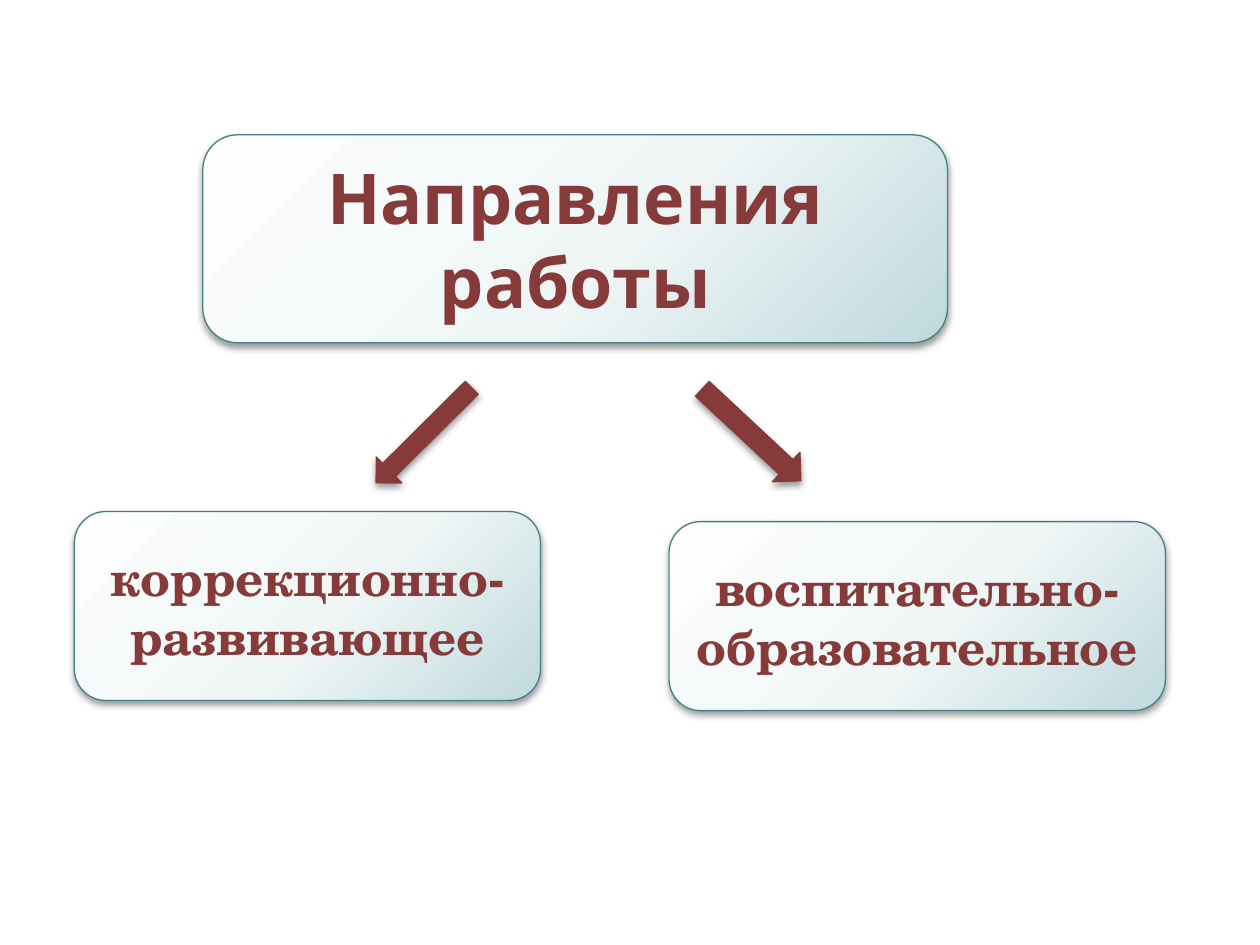
from pptx import Presentation
from pptx.dml.color import RGBColor
from pptx.enum.shapes import MSO_SHAPE as Shape
from pptx.enum.text import MSO_ANCHOR as Anchor, PP_ALIGN as Align
from pptx.oxml import parse_xml
from pptx.oxml.ns import nsdecls, qn
from pptx.util import Inches, Pt

SLIDE_W, SLIDE_H = Inches(10), Inches(7.5)

MAROON = RGBColor(0x86, 0x3A, 0x3A)
TEAL = RGBColor(0x43, 0x80, 0x86)
BLACK = RGBColor(0, 0, 0)
# Gradient stops: percent along the gradient, colour
CARD_STOPS = (
    (0, RGBColor(0xFE, 0xFE, 0xFE)),
    (55, RGBColor(0xF0, 0xF6, 0xF6)),
    (100, RGBColor(0xBF, 0xD9, 0xDD)),
)

HEADING = {"name": "Karla", "size": Pt(40), "bold": True}
BRANCH = {"name": "TeX Gyre Schola", "size": Pt(28), "bold": True}

# Places are left, top, width, height in percent of the slide
CARDS = (
    ("коррекционно-развивающее", (5.9, 54.13, 37, 20), BRANCH),
    ("воспитательно-образовательное", (53.1, 55.2, 39.4, 20), BRANCH),
    ("Направления работы", (16.1, 14.27, 59.1, 22), HEADING),
)
# Place and rotation of each arrow
ARROWS = (
    ((28.3, 44.13, 10.7, 3.87), 315.2),
    ((54.3, 43.87, 10.7, 4.27), 223),
)


def add_soft_shadow(shape):
    shape.shadow.inherit = False
    effects = shape._element.spPr.find(qn("a:effectLst"))
    effects.append(parse_xml(
        f'<a:outerShdw {nsdecls("a")} blurRad="{Pt(4.1)}" dist="{Pt(2)}" '
        f'dir="5400000" rotWithShape="0"><a:srgbClr val="{BLACK}">'
        '<a:alpha val="40000"/></a:srgbClr></a:outerShdw>'))


def add_raised_shape(slide, kind, place, fill_color, line_color):
    left, top, width, height = place
    shape = slide.shapes.add_shape(
        kind,
        round(SLIDE_W * left / 100), round(SLIDE_H * top / 100),
        round(SLIDE_W * width / 100), round(SLIDE_H * height / 100))
    shape.fill.solid()
    shape.fill.fore_color.rgb = fill_color
    shape.line.color.rgb = line_color
    shape.line.width = Pt(0.75)
    add_soft_shadow(shape)
    return shape


def apply_radial_gradient(shape):
    stops = "".join(
        f'<a:gs pos="{percent * 1000}"><a:srgbClr val="{color}"/></a:gs>'
        for percent, color in CARD_STOPS)
    gradient = parse_xml(
        f'<a:gradFill {nsdecls("a")} rotWithShape="1"><a:gsLst>{stops}</a:gsLst>'
        '<a:path path="circle"><a:fillToRect l="-40000" t="-90000" '
        'r="140000" b="190000"/></a:path></a:gradFill>')
    properties = shape._element.spPr
    properties.replace(properties.find(qn("a:solidFill")), gradient)


def add_card(slide, label, place, font_format):
    card = add_raised_shape(
        slide, Shape.ROUNDED_RECTANGLE, place, CARD_STOPS[0][1], TEAL)
    apply_radial_gradient(card)
    frame = card.text_frame
    frame.word_wrap = True
    frame.vertical_anchor = Anchor.MIDDLE
    paragraph = frame.paragraphs[0]
    paragraph.alignment = Align.CENTER
    run = paragraph.add_run()
    run.text = label
    for attribute, value in font_format.items():
        setattr(run.font, attribute, value)
    run.font.color.rgb = MAROON


def add_arrow(slide, place, rotation):
    arrow = add_raised_shape(slide, Shape.LEFT_ARROW, place, MAROON, MAROON)
    arrow.rotation = rotation


def main():
    deck = Presentation()
    deck.slide_width, deck.slide_height = SLIDE_W, SLIDE_H
    slide = deck.slides.add_slide(deck.slide_layouts[6])

    # Heading and its two branches
    for label, place, font_format in CARDS:
        add_card(slide, label, place, font_format)

    # Arrows from the heading to the branches
    for place, rotation in ARROWS:
        add_arrow(slide, place, rotation)

    deck.save("out.pptx")


if __name__ == "__main__":
    main()
